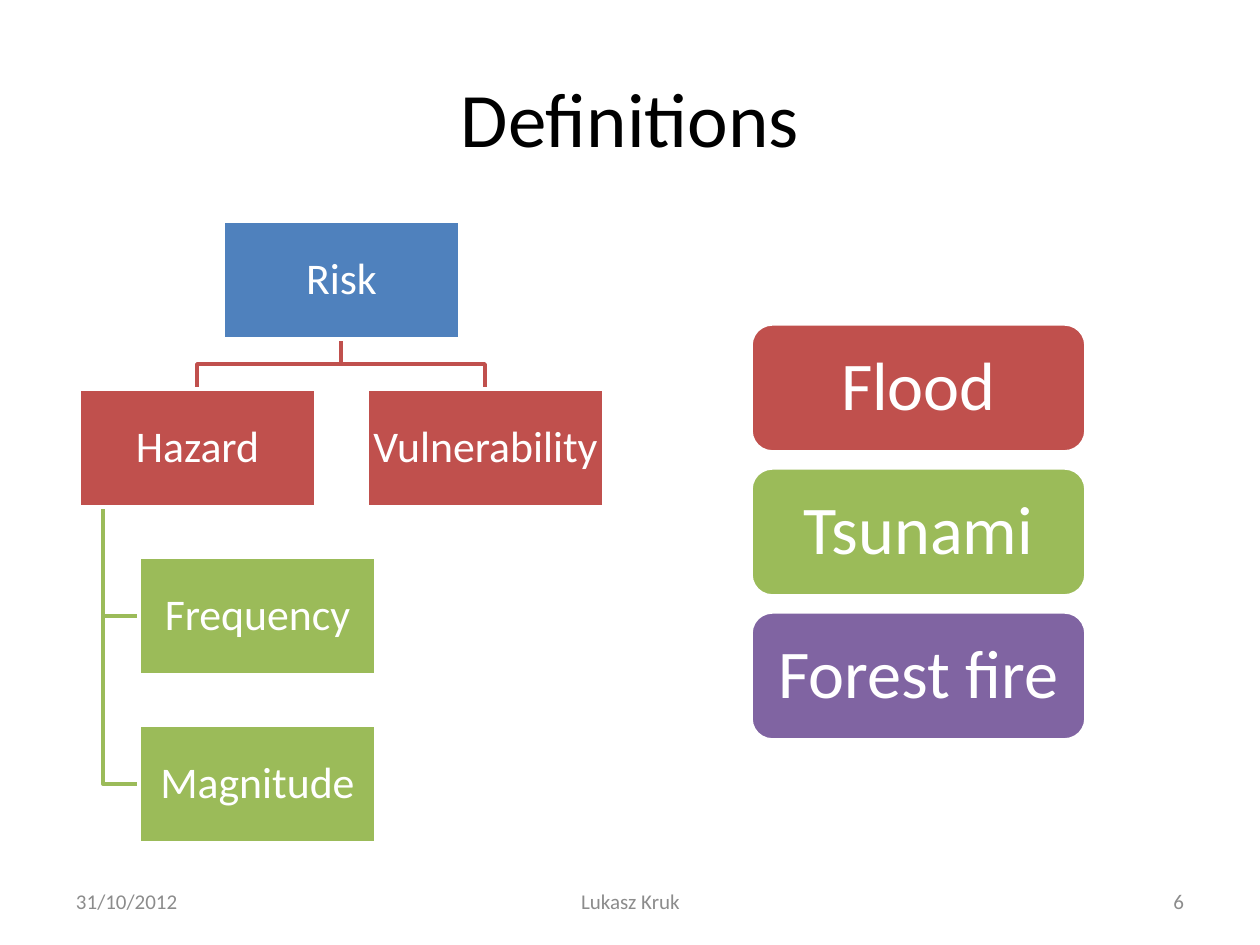
"""Build a slide defining risk as a hierarchy beside three example hazards."""
import pptx
import pptx.dml.color
import pptx.enum.shapes
import pptx.enum.text
import pptx.util

PX = 914400 / 126
COLORS = {"black": "000000", "white": "FFFFFF", "gray": "8C8C8C", "blue": "4F81BD",
          "red": "C0504D", "green": "9BBB59", "purple": "8064A2"}
SHAPES = pptx.enum.shapes.MSO_SHAPE
ALIGN = pptx.enum.text.PP_ALIGN


def rgb(color):
    return pptx.dml.color.RGBColor.from_string(COLORS[color])


def add_label(kind, words, left, top, width, height, size, color, fill=None,
              align=ALIGN.CENTER, inset=2):
    bounds = [round(value * PX) for value in (left, top, width, height)]
    if kind is None:
        label = slide.shapes.add_textbox(*bounds)
    else:
        label = slide.shapes.add_shape(kind, *bounds)
        label.shadow.inherit = False
        label.fill.solid()
        label.fill.fore_color.rgb = rgb(fill)
        label.line.color.rgb = rgb("white")
        label.line.width = pptx.util.Pt(2)
    frame = label.text_frame
    frame.word_wrap = True
    frame.vertical_anchor = pptx.enum.text.MSO_ANCHOR.MIDDLE
    frame.margin_left = frame.margin_right = round(inset * PX)
    frame.margin_top = frame.margin_bottom = round(min(inset, 6) * PX)
    paragraph = frame.paragraphs[0]
    paragraph.text = words
    paragraph.alignment = align
    if kind is not None:
        paragraph.line_spacing = 0.9
    paragraph.font.name = "Calibri"
    paragraph.font.size = pptx.util.Pt(size)
    paragraph.font.color.rgb = rgb(color)


deck = pptx.Presentation()
deck.slide_width = round(1260 * PX)
deck.slide_height = round(945 * PX)
slide = deck.slides.add_slide(deck.slide_layouts[6])

add_label(None, "Definitions", 63, 38, 1134, 157, 44, "black", inset=13)

box_width, box_height, row_step = 237, 118, 168
row_tops = [221 + row_step * row for row in range(4)]
risk_left, hazard_left, vulnerability_left, factor_left = 223, 79, 367, 139
risk_center = risk_left + box_width // 2
risk_bottom = row_tops[0] + box_height
branch_y = (risk_bottom + row_tops[1]) // 2
trunk_x = 103

branches = []
for child_left in (vulnerability_left, hazard_left):
    child_center = child_left + box_width // 2
    branches.append(("red", [(risk_center, risk_bottom), (risk_center, branch_y),
                             (child_center, branch_y), (child_center, row_tops[1])]))
for factor_top in row_tops[:1:-1]:
    factor_middle = factor_top + box_height // 2
    branches.append(("green", [(trunk_x, row_tops[1] + box_height),
                               (trunk_x, factor_middle), (factor_left, factor_middle)]))

for color, points in branches:
    builder = slide.shapes.build_freeform(*points[0], scale=PX)
    builder.add_line_segments(points[1:], close=False)
    branch = builder.convert_to_shape()
    branch.shadow.inherit = False
    branch.fill.background()
    branch.line.color.rgb = rgb(color)
    branch.line.width = pptx.util.Pt(2)

for term, left, row, fill in [("Risk", risk_left, 0, "blue"),
                              ("Hazard", hazard_left, 1, "red"),
                              ("Frequency", factor_left, 2, "green"),
                              ("Magnitude", factor_left, 3, "green"),
                              ("Vulnerability", vulnerability_left, 1, "red")]:
    add_label(SHAPES.RECTANGLE, term, left, row_tops[row], box_width, box_height,
              25, "white", fill)

for row, (hazard, fill) in enumerate([("Flood", "red"), ("Tsunami", "green"),
                                      ("Forest fire", "purple")]):
    add_label(SHAPES.ROUNDED_RECTANGLE, hazard, 751, 324 + 144 * row, 335, 128,
              39, "white", fill)

for words, left, width, align in [("31/10/2012", 63, 294, ALIGN.LEFT),
                                  ("Lukasz Kruk", 431, 399, ALIGN.CENTER),
                                  ("6", 903, 294, ALIGN.RIGHT)]:
    add_label(None, words, left, 876, width, 50, 12, "gray", align=align, inset=13)

deck.save("out.pptx")
